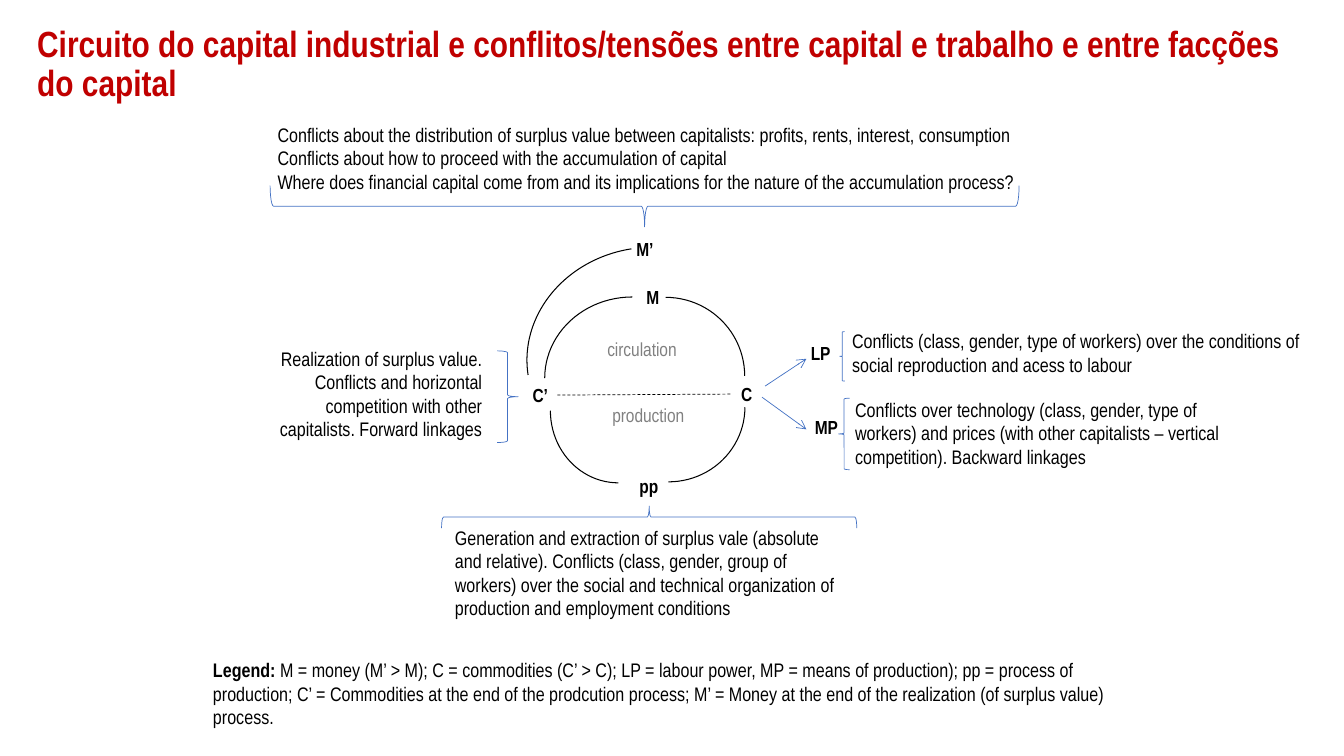
"""Build a slide on the circuit of industrial capital and its conflicts."""
from lxml.etree import SubElement
from pptx import Presentation
from pptx.dml.color import RGBColor
from pptx.enum.dml import MSO_LINE
from pptx.enum.shapes import MSO_CONNECTOR, MSO_SHAPE
from pptx.enum.text import MSO_ANCHOR, MSO_AUTO_SIZE, PP_ALIGN
from pptx.oxml.ns import qn
from pptx.util import Pt

FONT = "Arial Narrow"
RED = RGBColor(0xC0, 0x00, 0x00)
BLACK = RGBColor(0x00, 0x00, 0x00)
GREY = RGBColor(0x80, 0x80, 0x80)
BLUE = RGBColor(0x44, 0x72, 0xC4)
SIDE_MARGIN = Pt(6.75)
EDGE_MARGIN = Pt(3.38)

TITLE = ("Circuito do capital industrial e conflitos/tensões entre capital "
         "e trabalho e entre facções do capital")

STAGES = [
    ("M", 455, 200.9, 21.6),
    ("C", 522.7, 270, 21.6),
    ("pp", 450, 335.5, 26.6),
    ("C’", 373.7, 270.7, 24.5),
    ("M’", 447.8, 166.3, 25.9),
    ("LP", 572.4, 240.5, 28.1),
    ("MP", 575.3, 293.8, 30.2),
]
SPHERES = [
    ("circulation", 427, 237.6, 63.4),
    ("production", 430.6, 285.1, 67.7),
]
ARCS = [
    (419, 212.4, 113, 112.3, 0),
    (393.8, 207.4, 115.9, 125.3, 270),
    (393.1, 241.9, 97.2, 103, 180),
    (424.1, 236.2, 106.6, 109.4, 90),
    (385.2, 167.8, 155.5, 173.5, 261.2),
]
BRACES = [
    (MSO_SHAPE.LEFT_BRACE, 599.8, 236.9, 3.6, 35.3, 0),
    (MSO_SHAPE.LEFT_BRACE, 599, 284.4, 7.9, 51.1, 0),
    (MSO_SHAPE.RIGHT_BRACE, 455.8, 221, 15.8, 296.6, 270),
    (MSO_SHAPE.RIGHT_BRACE, 355, 250.6, 15.1, 65.5, 0),
    (MSO_SHAPE.RIGHT_BRACE, 445.7, -120.2, 29.5, 535, 90),
]
ARROWS = [
    (546.5, 275.8, 576, 256.3),
    (544.3, 283.7, 576, 306.7),
]
UNWRAPPED_NOTES = [
    ("Conflicts (class, gender, type of workers) over the conditions of\n"
     "social reproduction and acess to labour", 601.9, 231.8, 340.6, 40.3),
    ("Conflicts about the distribution of surplus value between capitalists: "
     "profits, rents, interest, consumption\n"
     "Conflicts about how to proceed with the accumulation of capital\n"
     "Where does financial capital come from and its implications for the "
     "nature of the accumulation process?", 191.5, 84.2, 545, 57.6),
]
WRAPPED_NOTES = [
    ("Conflicts over technology (class, gender, type of workers) and prices "
     "(with other capitalists – vertical competition). Backward linkages",
     604.1, 280.8, 288, 57.6),
    ("Generation and extraction of surplus vale (absolute and relative). "
     "Conflicts (class, gender, group of workers) over the social and "
     "technical organization of production and employment conditions",
     318.2, 372.2, 288, 74.2),
]
REALIZATION = ("Realization of surplus value. Conflicts and horizontal "
               "competition with other capitalists. Forward linkages")
LEGEND = ("M = money (M’ > M); C = commodities (C’ > C); LP = labour power, "
          "MP = means of production); pp = process of production; "
          "C’ = Commodities at the end of the prodcution process; "
          "M’ = Money at the end of the realization (of surplus value) process.")


def format_span(span, size, color=BLACK, bold=False):
    """Set the font of one run."""
    span.font.name = FONT
    span.font.size = Pt(size)
    span.font.bold = bold
    span.font.color.rgb = color


def add_title(page):
    """Place and format the title placeholder."""
    title = page.shapes.title
    title.left, title.top = Pt(19.4), Pt(12.2)
    title.width, title.height = Pt(917.3), Pt(68.4)
    frame = title.text_frame
    frame.text = TITLE
    frame.auto_size = MSO_AUTO_SIZE.NONE
    frame.vertical_anchor = MSO_ANCHOR.MIDDLE
    para = frame.paragraphs[0]
    para.alignment = PP_ALIGN.LEFT
    para.line_spacing = 0.9
    format_span(para.runs[0], 26, RED, True)


def add_text(page, text, left, top, width, height, size=14, color=BLACK,
             bold=False, wrap=True, alignment=PP_ALIGN.LEFT):
    """Add a text box with one format throughout."""
    box = page.shapes.add_textbox(Pt(left), Pt(top), Pt(width), Pt(height))
    frame = box.text_frame
    frame.margin_left = frame.margin_right = SIDE_MARGIN
    frame.margin_top = frame.margin_bottom = EDGE_MARGIN
    frame.word_wrap = wrap
    frame.auto_size = MSO_AUTO_SIZE.SHAPE_TO_FIT_TEXT
    frame.text = text
    for para in frame.paragraphs:
        para.alignment = alignment
        for span in para.runs:
            format_span(span, size, color, bold)
    return box


def add_label(page, text, left, top, width, color=BLACK, bold=False):
    """Add a one-line diagram label with spare room on its right."""
    box = add_text(page, text, left, top, width, 23, 13.5, color, bold)
    box.text_frame.margin_right = Pt(0)
    return box


def add_outline(page, kind, left, top, width, height, rotation, color, weight):
    """Add an unfilled arc or brace."""
    shape = page.shapes.add_shape(kind, Pt(left), Pt(top), Pt(width), Pt(height))
    shape.rotation = rotation
    shape.shadow.inherit = False
    shape.fill.background()
    shape.line.color.rgb = color
    shape.line.width = Pt(weight)


def add_line(page, start_x, start_y, end_x, end_y, color):
    """Add a thin straight connector without a shadow."""
    line = page.shapes.add_connector(MSO_CONNECTOR.STRAIGHT, Pt(start_x),
                                     Pt(start_y), Pt(end_x), Pt(end_y))
    line.line.color.rgb = color
    line.line.width = Pt(0.5)
    SubElement(line._element.spPr, qn("a:effectLst"))
    return line


def add_arrow(page, start_x, start_y, end_x, end_y):
    """Add a blue arrow with an open head."""
    arrow = add_line(page, start_x, start_y, end_x, end_y, BLUE)
    SubElement(arrow.line._get_or_add_ln(), qn("a:tailEnd"), type="arrow")


def main():
    """Build and save the slide."""
    deck = Presentation()
    deck.slide_width, deck.slide_height = Pt(960), Pt(540)
    page = deck.slides.add_slide(deck.slide_layouts[5])
    add_title(page)

    for arc in ARCS:
        add_outline(page, MSO_SHAPE.ARC, *arc, BLACK, 0.75)
    stages = {stage[0]: add_label(page, *stage, bold=True) for stage in STAGES}
    for sphere in SPHERES:
        add_label(page, *sphere, color=GREY)

    divider = add_line(page, 398.2, 282.2, 522.7, 281.5, BLACK)
    divider.begin_connect(stages["C’"], 3)
    divider.end_connect(stages["C"], 1)
    divider.line.dash_style = MSO_LINE.DASH
    for arrow in ARROWS:
        add_arrow(page, *arrow)
    for brace in BRACES:
        add_outline(page, *brace, BLUE, 0.5)

    for note in UNWRAPPED_NOTES:
        add_text(page, *note, wrap=False)
    for note in WRAPPED_NOTES:
        add_text(page, *note)
    add_text(page, REALIZATION, 174.2, 244.1, 177.1, 74.2,
             alignment=PP_ALIGN.RIGHT)
    legend = add_text(page, "Legend: ", 145.4, 466.6, 668.9, 57.6, bold=True)
    span = legend.text_frame.paragraphs[0].add_run()
    span.text = LEGEND
    format_span(span, 14)
    deck.save("out.pptx")


if __name__ == "__main__":
    main()
